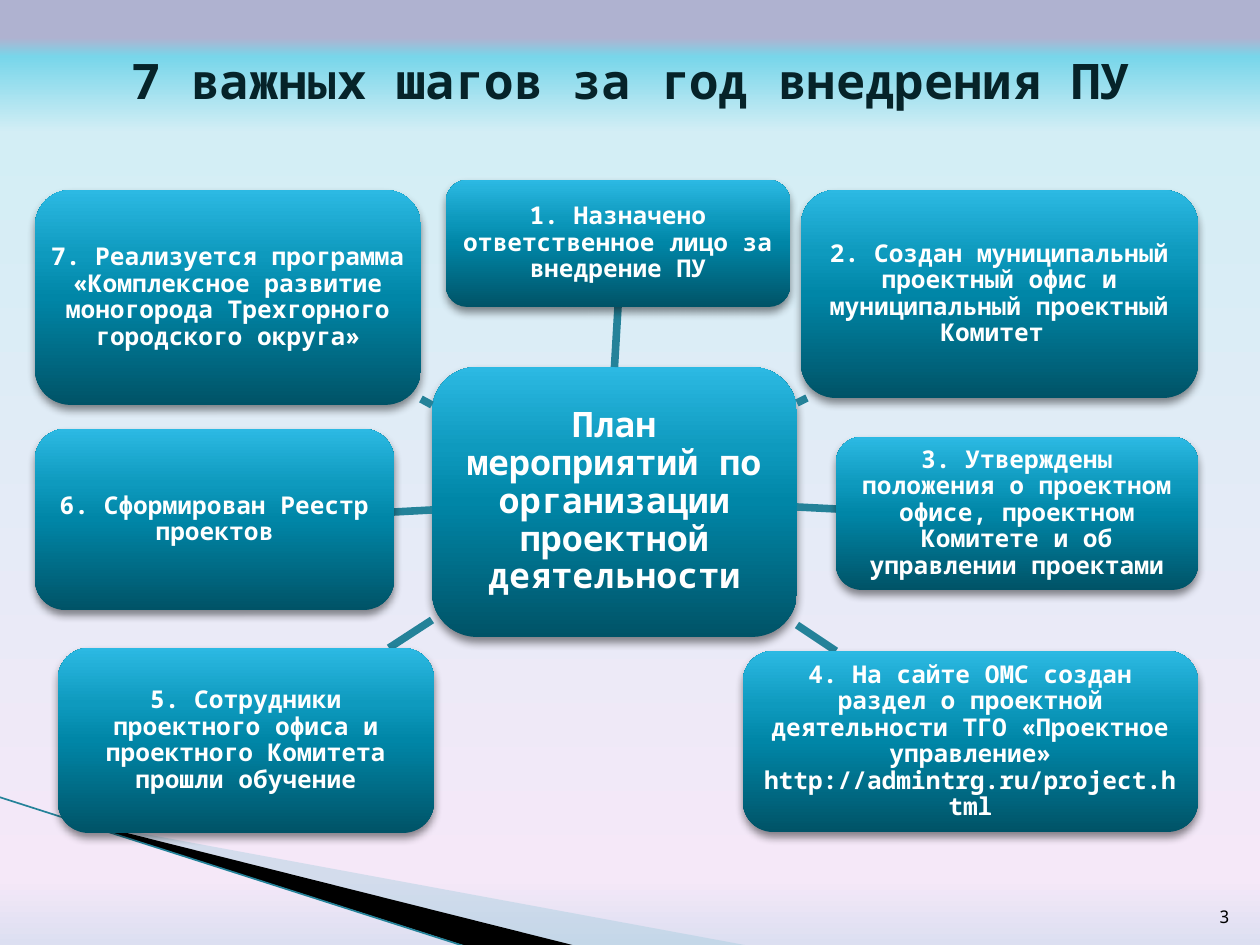
from dataclasses import dataclass

from lxml import etree
from pptx import Presentation
from pptx import util as u
from pptx.dml.color import RGBColor
from pptx.enum import shapes, text
from pptx.oxml import ns

PX = 914400 / 126


def px(n):
    return u.Emu(round(n * PX))


def add_xml(parent, tag, **attrs):
    return etree.SubElement(parent, ns.qn(tag), {k: str(v) for k, v in attrs.items()})


@dataclass(frozen=True)
class Theme:
    font: str = "Noto Sans Mono"
    title: str = "062329"
    light: str = "FFFFFF"
    dark: str = "000000"
    spoke: str = "248299"
    wedge: str = "A0CBDC"
    sky: tuple = ((4, "AFB2D0"), (6, "78D6EA"), (14, "D3EEF5"), (93, "F5E8F8"), (100, "DCDFF1"))
    box: tuple = ((0, "005367"), (50, "0086A7"), (70, "0E9ABE"), (100, "2CB9E3"))
    title_pt: int = 28
    hub_pt: int = 20
    step_pt: int = 14
    number_pt: int = 10


class SlideBuilder:
    def __init__(self, slide, theme):
        self.s, self.theme = slide, theme

    def gradient(self, fill, element, stops, angle):
        """Fill with any number of (percent, colour) stops; angle is clockwise."""
        fill.gradient()
        grad = element.xpath(".//a:gradFill")[0]
        for child in list(grad):
            grad.remove(child)
        stop_list = add_xml(grad, "a:gsLst")
        for percent, color in stops:
            stop = add_xml(stop_list, "a:gs", pos=percent * 1000)
            add_xml(stop, "a:srgbClr", val=color)
        add_xml(grad, "a:lin", ang=angle * 60000, scaled=0)

    def background(self):
        self.gradient(self.s.background.fill, self.s.element, self.theme.sky, 90)

    def label(self, shape, words, size, color, bold=True, inset=None,
              align=text.PP_ALIGN.CENTER, anchor=text.MSO_ANCHOR.MIDDLE, spacing=None):
        tf = shape.text_frame
        tf.word_wrap = True
        tf.auto_size = text.MSO_AUTO_SIZE.NONE
        tf.vertical_anchor = anchor
        if inset is not None:
            tf.margin_left = tf.margin_top = tf.margin_right = tf.margin_bottom = px(inset)
        p = tf.paragraphs[0]
        p.text = words
        p.alignment = align
        p.line_spacing = spacing
        p.font.name, p.font.size, p.font.bold = self.theme.font, u.Pt(size), bold
        p.font.color.rgb = RGBColor.from_string(color)

    def title(self, words, x, y, w, h):
        sp = self.s.shapes.title
        sp.left, sp.top, sp.width, sp.height = map(px, (x, y, w, h))
        self.label(sp, words, self.theme.title_pt, self.theme.title)

    def number(self, words, x, y, w, h):
        sp = self.s.shapes.add_textbox(*map(px, (x, y, w, h)))
        self.label(sp, words, self.theme.number_pt, self.theme.dark, bold=False,
                   align=text.PP_ALIGN.RIGHT, anchor=text.MSO_ANCHOR.BOTTOM)

    def box(self, words, bounds, size, inset):
        sp = self.s.shapes.add_shape(shapes.MSO_SHAPE.ROUNDED_RECTANGLE, *map(px, bounds))
        self.gradient(sp.fill, sp.element, self.theme.box, 270)
        sp.line.fill.background()
        sp.shadow.inherit = False
        effects = sp.element.xpath(".//a:effectLst")[0]
        shadow = add_xml(effects, "a:outerShdw", blurRad=u.Pt(5), dist=u.Pt(3),
                         dir=90 * 60000, rotWithShape=0)
        color = add_xml(shadow, "a:srgbClr", val=self.theme.dark)
        add_xml(color, "a:alpha", val=45000)
        self.label(sp, words, size, self.theme.light, inset=inset, spacing=0.9)
        return sp

    def line(self, ends, width):
        line = self.s.shapes.add_connector(shapes.MSO_CONNECTOR.STRAIGHT, *map(px, ends))
        line.line.color.rgb = RGBColor.from_string(self.theme.spoke)
        line.line.width = u.Pt(width)
        add_xml(line.element.spPr, "a:effectLst")
        return line

    def polygon(self, points, color, opacity=100):
        builder = self.s.shapes.build_freeform(*points[0], scale=PX)
        builder.add_line_segments(points[1:], close=True)
        sp = builder.convert_to_shape()
        sp.fill.solid()
        sp.fill.fore_color.rgb = RGBColor.from_string(color)
        sp.line.fill.background()
        sp.shadow.inherit = False
        if opacity < 100:
            add_xml(sp.element.xpath(".//a:solidFill/a:srgbClr")[0], "a:alpha", val=opacity * 1000)


HUB = ("План мероприятий по организации проектной деятельности", (432, 367, 365, 270))

# Wording, box bounds, spoke ends from the hub
STEPS = [
    ("1. Назначено ответственное лицо за внедрение ПУ",
     (446, 180, 344, 127), (616, 367, 617, 307)),
    ("2. Создан муниципальный проектный офис и муниципальный проектный Комитет ",
     (801, 190, 397, 208), (797, 403, 807, 398)),
    ("3. Утверждены положения о проектном офисе, проектном Комитете и об управлении проектами",
     (836, 437, 362, 153), (797, 507, 836, 509)),
    ("4. На сайте ОМС создан раздел о проектной деятельности ТГО "
     "«Проектное управление» http://admintrg.ru/project.html",
     (743, 651, 455, 181), (797, 625, 836, 651)),
    ("6. Сформирован Реестр проектов",
     (35, 429, 359, 181), (432, 510, 394, 512)),
    ("7. Реализуется программа «Комплексное развитие моногорода Трехгорного городского округа»",
     (35, 190, 386, 215), (432, 405, 421, 399)),
    ("5. Сотрудники проектного офиса и проектного Комитета прошли обучение",
     (58, 648, 376, 185), (432, 620, 389, 648)),
]


def main():
    prs = Presentation()
    prs.slide_width, prs.slide_height = px(1260), px(945)
    theme = Theme()
    b = SlideBuilder(prs.slides.add_slide(prs.slide_layouts[5]), theme)

    b.background()
    b.polygon([(69, 820), (750, 946), (575, 946), (69, 819)], theme.wedge, opacity=40)
    b.polygon([(67, 818), (576, 946), (469, 947), (68, 819)], theme.dark)
    b.line((-1, 797, 467, 947), 0.95)

    b.title("7 важных шагов за год внедрения ПУ", 64, 26, 1134, 107)
    hub = b.box(*HUB, theme.hub_pt, inset=8)
    for i, (words, bounds, ends) in enumerate(STEPS):
        spoke = b.line(ends, 4.33)
        step = b.box(words, bounds, theme.step_pt, inset=5)
        if i == 0:
            spoke.begin_connect(hub, 0)
            spoke.end_connect(step, 2)
    b.number("3", 1192, 883, 50, 50)

    prs.save("out.pptx")


if __name__ == "__main__":
    main()
